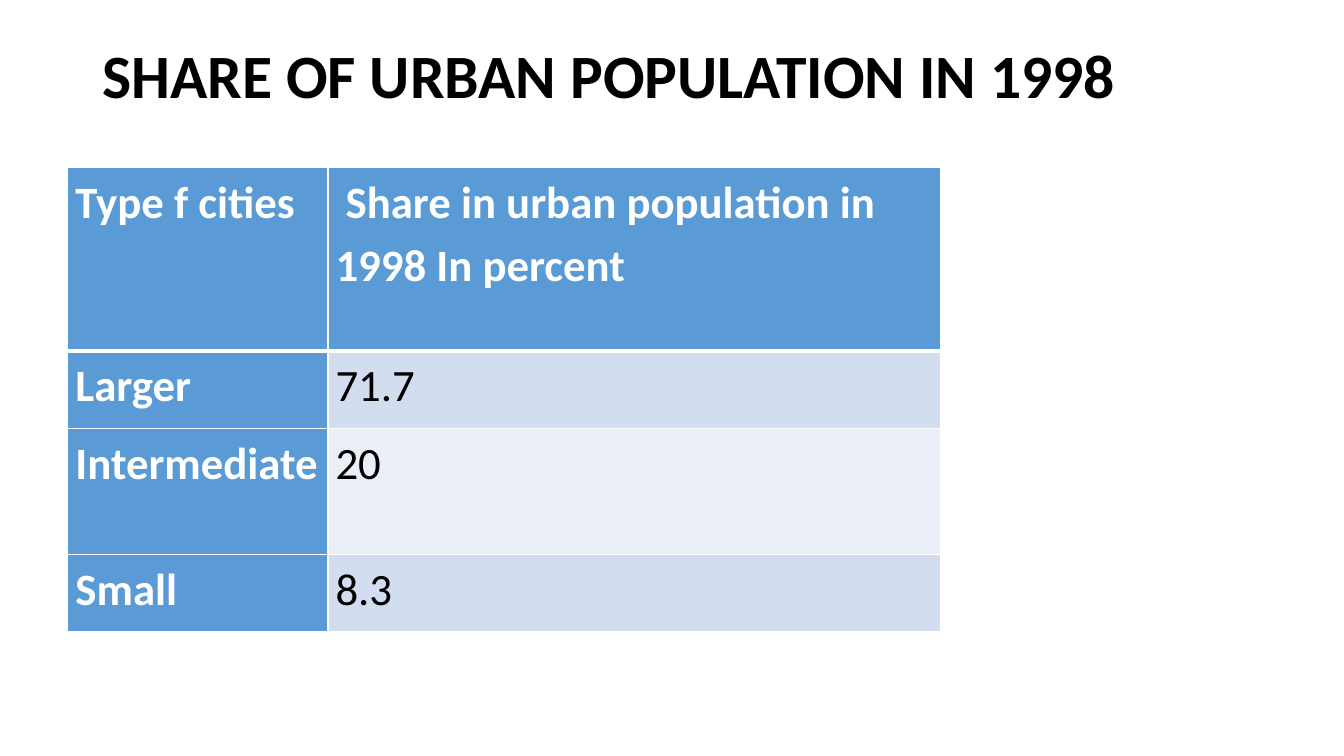
from dataclasses import dataclass

from lxml import etree
from pptx import Presentation
from pptx.dml.color import RGBColor
from pptx.enum.text import MSO_ANCHOR, PP_ALIGN
from pptx.oxml.ns import qn
from pptx.util import Pt

TOP = MSO_ANCHOR.TOP
LEFT = PP_ALIGN.LEFT


@dataclass(frozen=True)
class Theme:
    font: str = "Calibri"
    head: int = 44
    body: int = 32
    black: str = "000000"
    white: str = "FFFFFF"
    blue: str = "5B9BD5"
    bands: tuple = ("D2DEEF", "EAEFF7")
    thin: int = 1
    thick: int = 3


THEME = Theme()
TITLE = "SHARE OF URBAN POPULATION IN 1998"
ROWS = (
    ("Type f cities", " Share in urban population in 1998 In percent"),
    ("Larger", "71.7"),
    ("Intermediate", "20"),
    ("Small", "8.3"),
)
WIDTHS = (185.8, 437.8)
HEIGHTS = (131, 55.5, 90, 55.5)


def apply(item, values):
    for name, value in values.items():
        setattr(item, name, value)


def write(frame, text, size, color, bold, layout):
    frame.text = text
    para = frame.paragraphs[0]
    apply(para, {"alignment": LEFT, **layout})
    font = para.runs[0].font
    apply(font, {"name": THEME.font, "size": Pt(size), "bold": bold})
    font.color.rgb = RGBColor.from_string(color)


def add_title(slide):
    title = slide.shapes.title
    apply(title, {"left": Pt(66), "top": Pt(29), "width": Pt(828), "height": Pt(104)})
    apply(title.text_frame, {"vertical_anchor": TOP, "word_wrap": True})
    write(title.text_frame, TITLE, THEME.head, THEME.black, True, {"line_spacing": 0.9})


def add_edge(cell, side, width):
    props = cell._tc.get_or_add_tcPr()
    line = etree.SubElement(props, qn(f"a:ln{side}"), w=str(Pt(width)))
    fill = etree.SubElement(line, qn("a:solidFill"))
    etree.SubElement(fill, qn("a:srgbClr"), val=THEME.white)


def format_cell(cell, text, row, col):
    strong = row == 0 or col == 0
    edges = {
        "L": THEME.thin,
        "R": THEME.thin,
        "T": THEME.thick if row == 1 else THEME.thin,
        "B": THEME.thick if row == 0 else THEME.thin,
    }
    for side, width in edges.items():
        add_edge(cell, side, width)
    cell.fill.solid()
    shade = THEME.blue if strong else THEME.bands[(row - 1) % 2]
    cell.fill.fore_color.rgb = RGBColor.from_string(shade)
    apply(cell, {
        "margin_left": Pt(5.4), "margin_right": Pt(5.4),
        "margin_top": 0, "margin_bottom": 0, "vertical_anchor": TOP,
    })
    color = THEME.white if strong else THEME.black
    layout = {"line_spacing": 1.15, "space_after": Pt(10)}
    write(cell.text_frame, text, THEME.body, color, strong, layout)


def add_grid(slide):
    frame = slide.shapes.add_table(
        len(ROWS), len(WIDTHS), Pt(48.5), Pt(119.5),
        Pt(sum(WIDTHS)), Pt(sum(HEIGHTS)),
    )
    table = frame.table
    table.first_col = True
    for column, width in zip(table.columns, WIDTHS):
        column.width = Pt(width)
    for row, height in zip(table.rows, HEIGHTS):
        row.height = Pt(height)
    for row, texts in enumerate(ROWS):
        for col, text in enumerate(texts):
            format_cell(table.cell(row, col), text, row, col)


def main():
    deck = Presentation()
    apply(deck, {"slide_width": Pt(960), "slide_height": Pt(540)})
    slide = deck.slides.add_slide(deck.slide_layouts[5])
    add_title(slide)
    add_grid(slide)
    deck.save("out.pptx")


if __name__ == "__main__":
    main()
